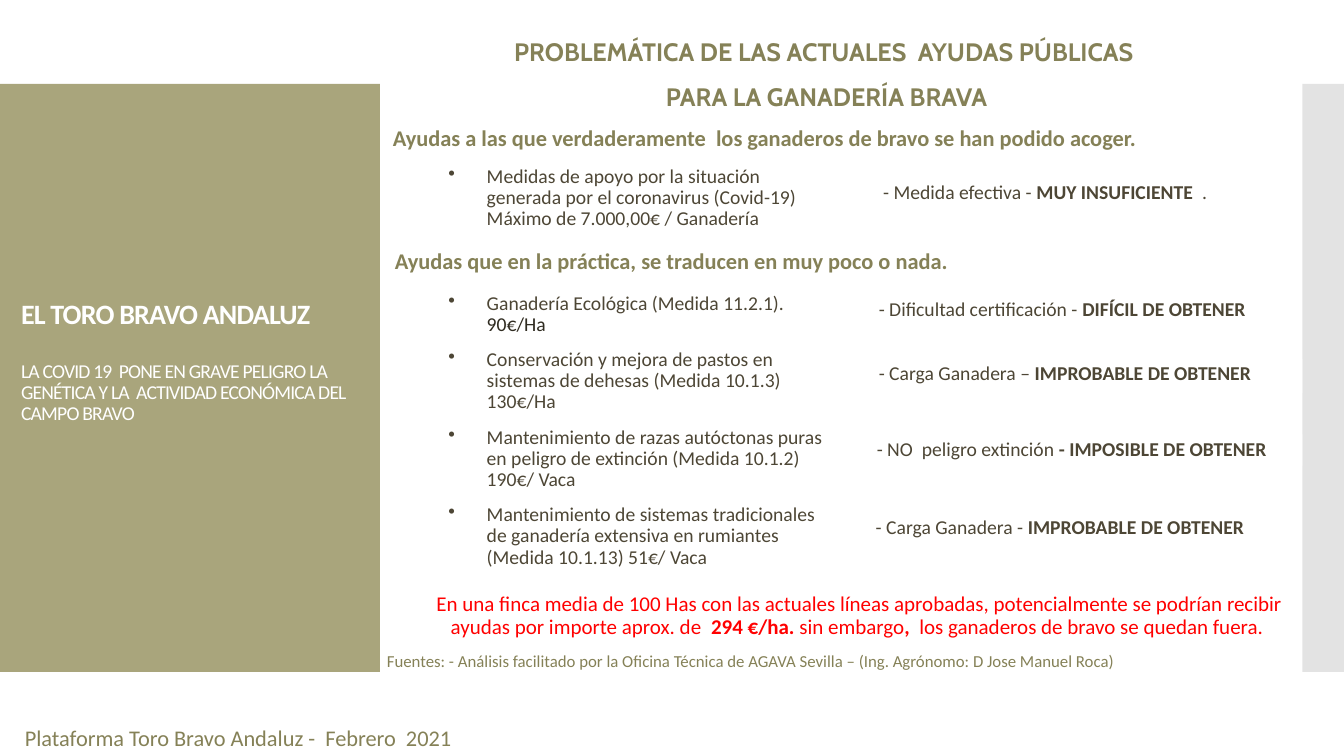
from pptx import Presentation
from pptx import util as u
from pptx.dml.color import RGBColor
from pptx.enum import shapes, text
from pptx.oxml.ns import qn
from lxml import etree

OLIVE = RGBColor(0xA9, 0xA5, 0x7C)
DARK_OLIVE = RGBColor(0x85, 0x81, 0x57)
BROWN = RGBColor(0x4D, 0x46, 0x35)
DARK_BROWN = RGBColor(0x2F, 0x2B, 0x20)
GREY = RGBColor(0xC8, 0xC8, 0xC8)
WHITE = RGBColor(0xFF, 0xFF, 0xFF)
RED = RGBColor(0xFF, 0x00, 0x00)

LEFT, CENTER, RIGHT = text.PP_ALIGN.LEFT, text.PP_ALIGN.CENTER, text.PP_ALIGN.RIGHT


class SlideBuilder:
    """Places elements by boxes (left, top, width, height) in percent of the slide."""

    font = "Calibri"
    line_spacing = 0.9
    indent = u.Inches(0.38)

    def __init__(self, presentation):
        self.width = presentation.slide_width
        self.height = presentation.slide_height
        self.slide = presentation.slides.add_slide(presentation.slide_layouts[6])

    def place(self, box):
        left, top, width, height = box
        return [round(share * length / 100) for share, length in
                ((left, self.width), (top, self.height),
                 (width, self.width), (height, self.height))]

    def block(self, box, color, opacity=100):
        shape = self.slide.shapes.add_shape(shapes.MSO_SHAPE.RECTANGLE, *self.place(box))
        shape.shadow.inherit = False
        shape.line.fill.background()
        shape.fill.solid()
        shape.fill.fore_color.rgb = color
        if opacity < 100:
            fill_color = shape._element.spPr.find(qn("a:solidFill"))[0]
            etree.SubElement(fill_color, qn("a:alpha"), val=str(opacity * 1000))
        return shape

    def label(self, box, paragraphs, **style):
        shape = self.slide.shapes.add_textbox(*self.place(box))
        self.fill_text(shape, paragraphs, **style)
        return shape

    def panel(self, box, paragraphs, **style):
        self.fill_text(self.block(box, WHITE, 70), paragraphs, space_before=10, **style)

    def fill_text(self, shape, paragraphs, anchor=text.MSO_ANCHOR.TOP, **style):
        frame = shape.text_frame
        frame.word_wrap = True
        frame.vertical_anchor = anchor
        for index, runs in enumerate(paragraphs):
            paragraph = frame.add_paragraph() if index else frame.paragraphs[0]
            self.paragraph(paragraph, runs, **style)

    def paragraph(self, paragraph, runs, size=14, color=BROWN, bold=None, align=LEFT,
                  font=None, spacing=None, space_before=0, bullet=False):
        """Each run is a pair: its wording and a dict of font settings of its own."""
        paragraph.alignment = align
        paragraph.line_spacing = spacing or self.line_spacing
        paragraph.space_before = u.Pt(space_before)
        paragraph.font.name = font or self.font
        paragraph.font.size = u.Pt(size)
        paragraph.font.color.rgb = color
        paragraph.font.bold = bold
        if bullet:
            properties = paragraph._p.get_or_add_pPr()
            properties.set("marL", str(self.indent))
            properties.set("indent", str(-self.indent))
            mark = etree.Element(qn("a:buChar"), char="•")
            properties.find(qn("a:defRPr")).addprevious(mark)
        for wording, own in runs:
            run = paragraph.add_run()
            run.text = wording
            if "bold" in own:
                run.font.bold = own["bold"]
            if "color" in own:
                run.font.color.rgb = own["color"]
            if "tracking" in own:
                run._r.get_or_add_rPr().set("spc", str(own["tracking"]))


def plain(wording):
    return [(wording, {})]


def verdict(lead, result, tail=""):
    runs = [(lead, {}), (result, {"bold": True})]
    return runs + plain(tail) if tail else runs


def main():
    presentation = Presentation()
    presentation.slide_width = u.Inches(13.33)
    presentation.slide_height = u.Inches(7.5)
    builder = SlideBuilder(presentation)

    # Side bands
    builder.block((0, 11.11, 28.27, 77.78), OLIVE)
    builder.block((96.9, 11.11, 3.1, 77.78), GREY, 50)

    # Title
    builder.label((36.38, 2.13, 50.25, 12.8),
                  [plain("PROBLEMÁTICA DE LAS ACTUALES  AYUDAS PÚBLICAS  PARA LA GANADERÍA BRAVA")],
                  size=18, color=DARK_OLIVE, bold=True, align=CENTER, font="Cabin", spacing=1.5)

    # Side heading and subtitle
    tight = {"tracking": -60}
    side = builder.label((0.83, 14.4, 25.95, 67.07),
                         [[("EL TORO BRAVO ANDALUZ", {"bold": True, **tight})],
                          [("LA COVID 19  PONE EN GRAVE PELIGRO LA GENÉTICA Y LA  "
                            "ACTIVIDAD ECONÓMICA DEL CAMPO BRAVO", tight)]],
                         color=WHITE, anchor=text.MSO_ANCHOR.MIDDLE)
    heading = side.text_frame.paragraphs[0]
    heading.font.size = u.Pt(20)
    heading.space_after = u.Pt(22)

    # Section headings
    for left, top, wording in (
            (28.5, 16.13, "Ayudas a las que verdaderamente  los ganaderos de bravo se han podido acoger."),
            (28.65, 32.4, "Ayudas que en la práctica, se traducen en muy poco o nada.")):
        builder.panel((left, top, 61.58, 5.2), [plain(wording)],
                      size=16, color=DARK_OLIVE, bold=True)

    # Aid measures
    effective = [plain("Medidas de apoyo por la situación generada por el coronavirus (Covid-19) "
                       "Máximo de 7.000,00€ / Ganadería")]
    ineffective = [
        [("Ganadería Ecológica (Medida 11.2.1).", {}), (" 90€/Ha", {"color": DARK_BROWN})],
        plain("Conservación y mejora de pastos en sistemas de dehesas (Medida 10.1.3) 130€/Ha"),
        plain("Mantenimiento de razas autóctonas puras en peligro de extinción "
              "(Medida 10.1.2) 190€/ Vaca"),
        plain("Mantenimiento de sistemas tradicionales de ganadería extensiva en rumiantes "
              "(Medida 10.1.13) 51€/ Vaca"),
    ]
    for top, height, measures in ((21.33, 9.73, effective), (38.13, 38.13, ineffective)):
        builder.panel((32.63, top, 30.45, height), measures, bullet=True)

    # Verdict beside each measure
    for box, runs in (
            ((64.65, 23.47, 30.83, 5.2),
             verdict(" - Medida efectiva -", " MUY INSUFICIENTE  ", ".")),
            ((64.65, 38.93, 30.45, 4.53),
             verdict("- Dificultad certificación - ", "DIFÍCIL DE OBTENER")),
            ((64.65, 47.47, 32.25, 4.53),
             verdict("- Carga Ganadera – ", "IMPROBABLE DE OBTENER")),
            ((64.5, 57.47, 32.4, 4.13),
             verdict("- NO  peligro extinción", " - IMPOSIBLE DE OBTENER")),
            ((64.42, 67.87, 31.8, 4.53),
             verdict("- Carga Ganadera - ", "IMPROBABLE DE OBTENER"))):
        builder.panel(box, [runs])

    # Conclusion
    strong = {"bold": True}
    builder.panel((31.05, 77.87, 65.78, 7.33),
                  [[("En una finca media de 100 Has con las actuales líneas aprobadas, "
                     "potencialmente se podrían recibir ayudas por importe aprox. de  ", {}),
                    ("294 €/ha. ", strong), ("sin embargo", {}), (",  ", strong),
                    ("los ganaderos de bravo se quedan fuera. ", {})]],
                  size=15, color=RED, align=CENTER)

    # Sources and footer
    builder.label((28.05, 85.73, 58.65, 4.13),
                  [plain("Fuentes: - Análisis facilitado por la Oficina Técnica de AGAVA Sevilla – "
                         "(Ing. Agrónomo: D Jose Manuel Roca)")],
                  size=12, color=DARK_OLIVE)
    builder.label((0, 95.47, 34.35, 4.53),
                  [plain("Plataforma Toro Bravo Andaluz -  Febrero  2021")],
                  size=16, color=DARK_OLIVE, align=RIGHT)

    presentation.save("out.pptx")


if __name__ == "__main__":
    main()
